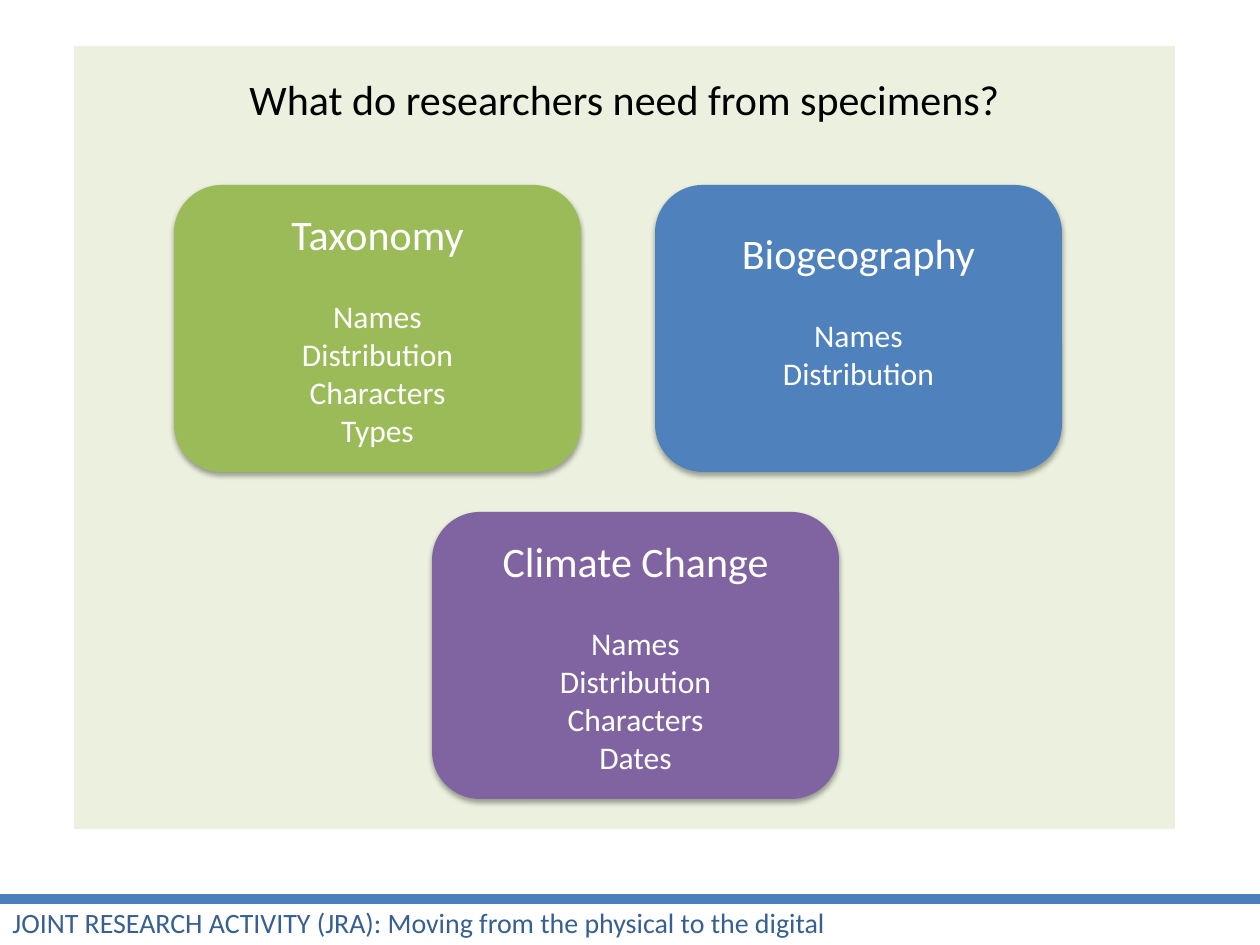
"""Build the slide on what researchers need from specimens."""
from lxml.etree import SubElement
from pptx import Presentation
from pptx.dml.color import RGBColor
from pptx.enum.shapes import MSO_CONNECTOR, MSO_SHAPE
from pptx.enum.text import MSO_ANCHOR, PP_ALIGN
from pptx.oxml.ns import qn
from pptx.util import Emu, Pt

WHITE = RGBColor(0xFF, 0xFF, 0xFF)
BLACK = RGBColor(0, 0, 0)
PALE_GREEN = RGBColor(0xEB, 0xF1, 0xDE)
GREEN = RGBColor(0x9B, 0xBB, 0x59)
BLUE = RGBColor(0x4F, 0x81, 0xBD)
PURPLE = RGBColor(0x80, 0x64, 0xA2)
RULE_BLUE = RGBColor(0x4B, 0x7E, 0xBC)
FOOTER_BLUE = RGBColor(0x37, 0x60, 0x92)

FONT = "Calibri"
QUESTION = "What do researchers need from specimens?"
FOOTER = "JOINT RESEARCH ACTIVITY (JRA): Moving from the physical to the digital"
FIELDS = [
    ("Taxonomy", ["Names", "Distribution", "Characters", "Types"], GREEN, 174, 185, 6),
    ("Biogeography", ["Names", "Distribution"], BLUE, 655, 185, 44),
    ("Climate Change", ["Names", "Distribution", "Characters", "Dates"], PURPLE, 432, 512, 6),
]

SLIDE_W, SLIDE_H = 1260, 945
PANEL = (74, 46, 1101, 783)
CARD_W, CARD_H = 407, 287
RULE_Y = 899


def px(length):
    return Emu(round(length * 914400 / 126))


def box(*lengths):
    return [px(length) for length in lengths]


def style(paragraph, size, color, align):
    paragraph.alignment = align
    paragraph.space_before = Pt(0)
    paragraph.font.name = FONT
    paragraph.font.size = Pt(size)
    paragraph.font.color.rgb = color


def add_block(slide, preset, place, fill):
    block = slide.shapes.add_shape(preset, *box(*place))
    block.shadow.inherit = False
    block.fill.solid()
    block.fill.fore_color.rgb = fill
    block.line.fill.background()
    return block


def add_soft_shadow(block):
    effects = block.element.spPr.find(qn("a:effectLst"))
    shadow = SubElement(effects, qn("a:outerShdw"), blurRad=str(Pt(3.1)),
                        dist=str(Pt(1.8)), dir="5400000", rotWithShape="0")
    black = SubElement(shadow, qn("a:srgbClr"), val="000000")
    SubElement(black, qn("a:alpha"), val="35000")


def add_card(slide, field, needs, fill, left, top, bottom_inset):
    card = add_block(slide, MSO_SHAPE.ROUNDED_RECTANGLE, (left, top, CARD_W, CARD_H), fill)
    add_soft_shadow(card)
    frame = card.text_frame
    frame.word_wrap = True
    frame.vertical_anchor = MSO_ANCHOR.MIDDLE
    frame.margin_bottom = px(bottom_inset)
    frame.text = "\n".join([field, *needs])
    heading, *items = frame.paragraphs
    style(heading, 24, WHITE, PP_ALIGN.CENTER)
    heading.space_after = Pt(22)
    for item in items:
        style(item, 18, WHITE, PP_ALIGN.CENTER)


def add_question(slide):
    question = slide.shapes.title
    question.left, question.top, question.width, question.height = box(74, 67, 1101, 63)
    question.text_frame.text = QUESTION
    question.text_frame.vertical_anchor = MSO_ANCHOR.TOP
    style(question.text_frame.paragraphs[0], 24, BLACK, PP_ALIGN.CENTER)
    question.element.getparent().append(question.element)


def add_footer(slide):
    rule = slide.shapes.add_connector(MSO_CONNECTOR.STRAIGHT, *box(0, RULE_Y, SLIDE_W, RULE_Y))
    rule.line.color.rgb = RULE_BLUE
    rule.line.width = Pt(5.5)
    SubElement(rule.element.spPr, qn("a:effectLst"))
    footer = slide.shapes.add_textbox(*box(0, RULE_Y, 978, 47))
    footer.text_frame.word_wrap = True
    footer.text_frame.text = FOOTER
    style(footer.text_frame.paragraphs[0], 16, FOOTER_BLUE, PP_ALIGN.LEFT)


def main():
    deck = Presentation()
    deck.slide_width, deck.slide_height = box(SLIDE_W, SLIDE_H)
    slide = deck.slides.add_slide(deck.slide_layouts[5])
    add_block(slide, MSO_SHAPE.RECTANGLE, PANEL, PALE_GREEN)
    for field in FIELDS:
        add_card(slide, *field)
    add_question(slide)
    add_footer(slide)
    deck.save("out.pptx")


if __name__ == "__main__":
    main()
